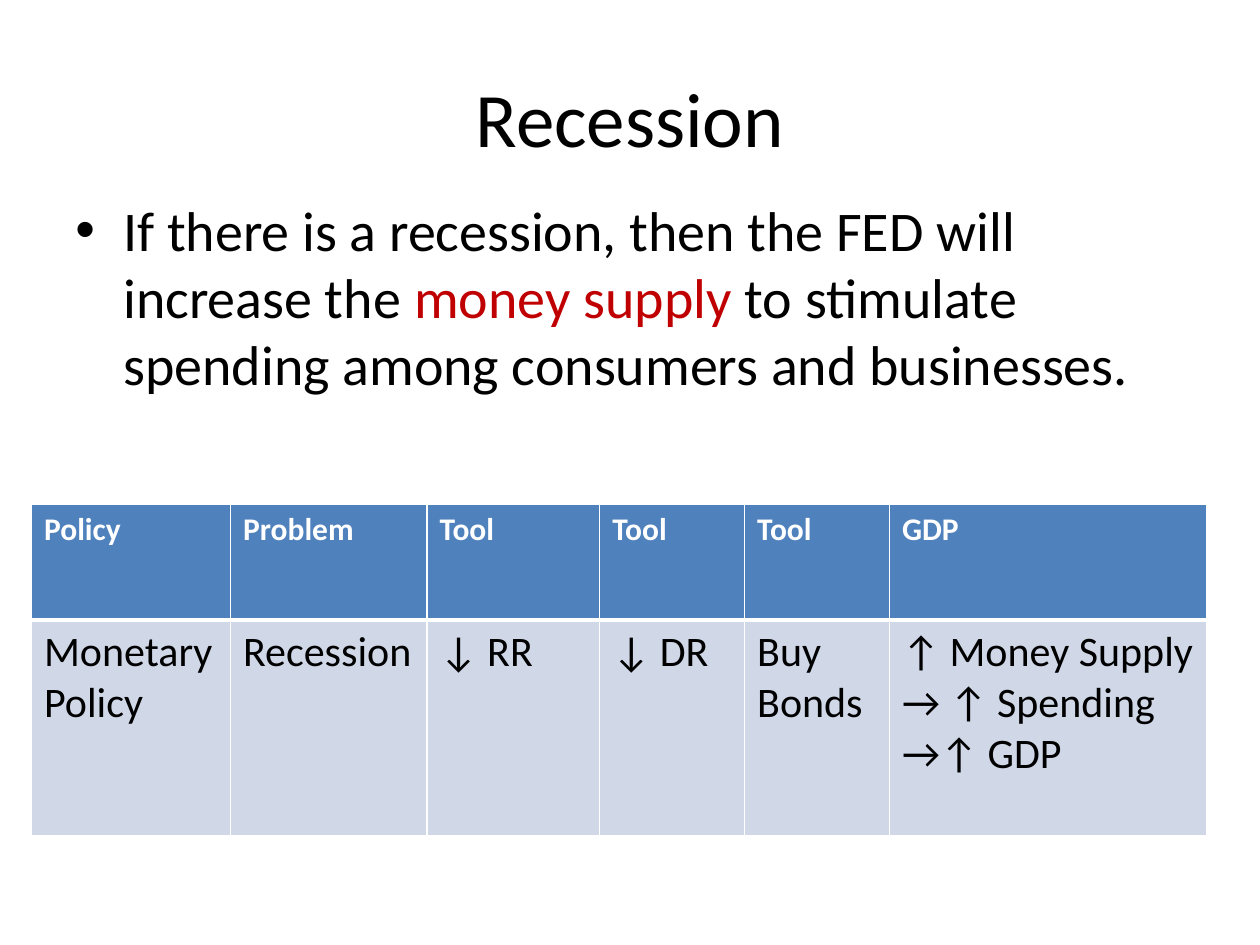
from lxml import etree
from pptx import Presentation
from pptx.dml.color import RGBColor
from pptx.enum.text import MSO_ANCHOR, PP_ALIGN
from pptx.oxml.ns import qn
from pptx.util import Inches, Pt

MIDDLE, TOP = MSO_ANCHOR.MIDDLE, MSO_ANCHOR.TOP
CENTER, LEFT = PP_ALIGN.CENTER, PP_ALIGN.LEFT
BLACK, WHITE, RED = "000000", "FFFFFF", "C00000"
BLUE, PALE = "4F81BD", "D0D8E8"

COLS = [1.58, 1.56, 1.37, 1.15, 1.15, 2.52]
ROWS = [0.92, 1.71]
HEADS = ["Policy", "Problem", "Tool", "Tool", "Tool", "GDP"]
CELLS = ["Monetary Policy", "Recession", "↓ RR", "↓ DR", "Buy Bonds",
         "↑ Money Supply → ↑ Spending →↑ GDP"]


def color(code):
    return RGBColor.from_string(code)


def write(frame, runs, size, bold=False, align=LEFT, anchor=TOP):
    """Fill the first paragraph with (text, colour) runs and return it."""
    frame.word_wrap = True
    frame.vertical_anchor = anchor
    para = frame.paragraphs[0]
    para.alignment = align
    for text, code in runs:
        run = para.add_run()
        run.text = text
        font = run.font
        font.name, font.size, font.bold = "Calibri", Pt(size), bold
        font.color.rgb = color(code)
    return para


def add_text(slide, left, top, width, height, runs, **style):
    box = slide.shapes.add_textbox(
        Inches(left), Inches(top), Inches(width), Inches(height))
    return write(box.text_frame, runs, **style)


def add_bullet(para, indent):
    props = para._p.get_or_add_pPr()
    props.set("marL", str(Inches(indent)))
    props.set("indent", str(-Inches(indent)))
    etree.SubElement(props, qn("a:buFont"), typeface="Arial")
    etree.SubElement(props, qn("a:buChar"), char="•")


def add_border(cell, side, width):
    line = etree.SubElement(cell._tc.get_or_add_tcPr(), qn("a:ln" + side),
                            w=str(Pt(width)))
    fill = etree.SubElement(line, qn("a:solidFill"))
    etree.SubElement(fill, qn("a:srgbClr"), val=WHITE)


def fill_row(table, row, texts, fill, ink, size, bold, thick):
    """Write one row; the side named by thick has the heavy border."""
    for col, text in enumerate(texts):
        cell = table.cell(row, col)
        write(cell.text_frame, [(text, ink)], size, bold)
        for side in "LRTB":
            add_border(cell, side, 3 if side == thick else 1)
        cell.fill.solid()
        cell.fill.fore_color.rgb = color(fill)


def add_policy(slide):
    table = slide.shapes.add_table(
        len(ROWS), len(COLS), Inches(0.25), Inches(4),
        Inches(sum(COLS)), Inches(sum(ROWS))).table
    for col, width in zip(table.columns, COLS):
        col.width = Inches(width)
    for row, height in zip(table.rows, ROWS):
        row.height = Inches(height)
    fill_row(table, 0, HEADS, BLUE, WHITE, 18, True, "B")
    fill_row(table, 1, CELLS, PALE, BLACK, 24, False, "T")


def main():
    deck = Presentation()
    deck.slide_width, deck.slide_height = Inches(10), Inches(7.5)
    slide = deck.slides.add_slide(deck.slide_layouts[6])
    add_text(slide, 0.5, 0.3, 9, 1.25, [("Recession", BLACK)],
             size=44, align=CENTER, anchor=MIDDLE)
    body = add_text(slide, 0.5, 1.5, 9, 1.75, [
        ("If there is a recession, then the FED will increase the ", BLACK),
        ("money supply ", RED),
        ("to stimulate spending among consumers and businesses.", BLACK),
    ], size=32)
    body.space_before = Pt(6.4)
    add_bullet(body, 0.38)
    add_policy(slide)
    deck.save("out.pptx")


if __name__ == "__main__":
    main()
